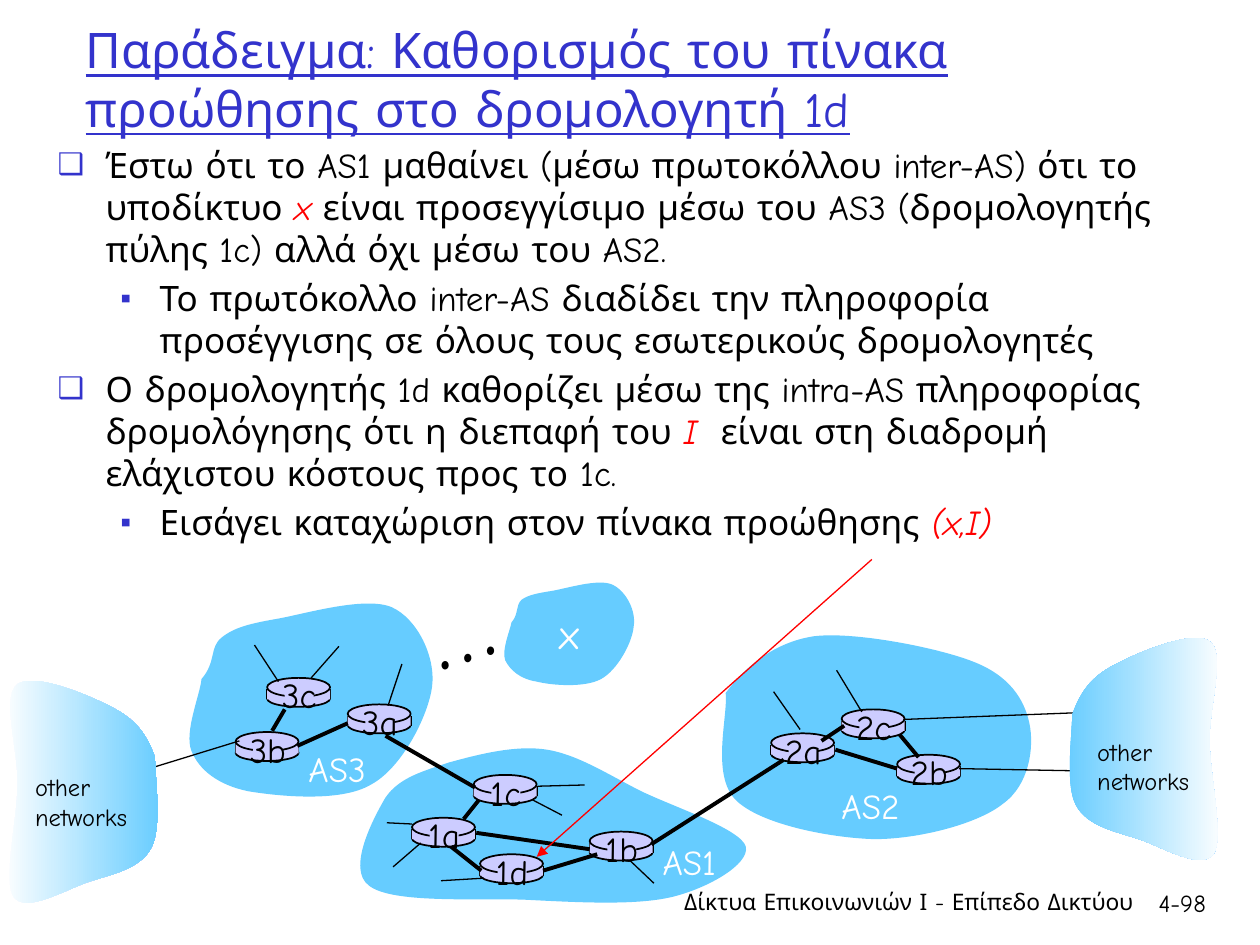
from dataclasses import dataclass
from lxml import etree
from pptx import Presentation
from pptx.dml.color import RGBColor
from pptx.enum.shapes import MSO_CONNECTOR, MSO_SHAPE
from pptx.enum.text import MSO_ANCHOR, MSO_AUTO_SIZE, PP_ALIGN
from pptx.oxml.ns import qn
from pptx.util import Inches, Pt

STRAIGHT = MSO_CONNECTOR.STRAIGHT
ELLIPSE, RECTANGLE = MSO_SHAPE.OVAL, MSO_SHAPE.RECTANGLE
LEFT, CENTER, RIGHT = PP_ALIGN.LEFT, PP_ALIGN.CENTER, PP_ALIGN.RIGHT
TOP, MIDDLE = MSO_ANCHOR.TOP, MSO_ANCHOR.MIDDLE
GROW = MSO_AUTO_SIZE.SHAPE_TO_FIT_TEXT
FIXED = MSO_AUTO_SIZE.NONE


@dataclass(frozen=True)
class Theme:
    font: str = "Comic Neue"
    black: str = "000000"
    white: str = "FFFFFF"
    accent: str = "3333CC"
    highlight: str = "FF0000"
    cloud: str = "66CCFF"
    router: str = "CCCCFF"
    title: int = 28
    body: int = 20
    network: int = 24
    dots: int = 54
    small: int = 14
    footer: int = 13
    thick: float = 2.25
    thin: float = 0.75
    outline: float = 1


THEME = Theme()

TITLE = "Παράδειγμα: Καθορισμός του πίνακα προώθησης στο δρομολογητή 1d"
BODY = [
    (0, ["Έστω ότι το AS1 μαθαίνει (μέσω πρωτοκόλλου inter-AS) ότι το υποδίκτυο ", "x ",
         "είναι προσεγγίσιμο μέσω του AS3 (δρομολογητής πύλης 1c) αλλά όχι μέσω του AS2."]),
    (1, ["Το πρωτόκολλο inter-AS διαδίδει την πληροφορία προσέγγισης σε όλους τους "
         "εσωτερικούς δρομολογητές"]),
    (0, ["Ο δρομολογητής 1d καθορίζει μέσω της intra-AS πληροφορίας δρομολόγησης ότι η "
         "διεπαφή του ", "I  ", "είναι στη διαδρομή ελάχιστου κόστους προς το 1c."]),
    (1, ["Εισάγει καταχώριση στον πίνακα προώθησης ", "(x,I)"]),
]
BULLETS = [("❑", 85, 0.38, -0.38), ("▪", 75, 0.81, -0.31)]

CLOUDS = {
    "AS2": [(5.76, 5.5), (5.9, 5.31), (6.13, 5.1), (6.46, 5.05), (6.78, 5.01), (7.44, 5.14),
            (7.72, 5.25), (8.01, 5.36), (8.13, 5.55), (8.17, 5.74), (8.21, 5.93), (8.17, 6.23),
            (7.96, 6.38), (7.76, 6.54), (7.29, 6.66), (6.94, 6.66), (6.58, 6.65), (6.03, 6.54),
            (5.84, 6.35), (5.64, 6.15), (5.78, 5.68), (5.76, 5.5)],
    "AS3": [(1.6, 5.39), (1.72, 5.25), (1.66, 5.14), (1.76, 5.06), (1.86, 4.98), (1.98, 4.95),
            (2.21, 4.91), (2.43, 4.87), (2.9, 4.73), (3.11, 4.82), (3.31, 4.91), (3.46, 5.21),
            (3.43, 5.45), (3.4, 5.68), (3.19, 6.1), (2.94, 6.23), (2.7, 6.37), (2.21, 6.32),
            (1.97, 6.28), (1.73, 6.23), (1.58, 6.11), (1.52, 5.96), (1.46, 5.81), (1.59, 5.51),
            (1.6, 5.39)],
    "AS1": [(3.06, 6.33), (3.17, 6.17), (3.36, 6.12), (3.57, 6.05), (3.79, 5.99), (4.09, 5.91),
            (4.34, 5.95), (4.59, 5.99), (4.83, 6.15), (5.09, 6.28), (5.36, 6.41), (5.88, 6.58),
            (5.92, 6.72), (5.95, 6.86), (5.62, 7.05), (5.33, 7.12), (5.03, 7.19), (4.55, 7.16),
            (4.15, 7.14), (3.75, 7.13), (3.11, 7.17), (2.93, 7.03), (2.75, 6.9), (2.96, 6.5),
            (3.06, 6.33)],
    "x": [(4.06, 4.94), (4.12, 4.87), (4.09, 4.81), (4.14, 4.76), (4.2, 4.72), (4.26, 4.71),
          (4.38, 4.69), (4.5, 4.67), (4.75, 4.59), (4.86, 4.64), (4.97, 4.69), (5.05, 4.85),
          (5.03, 4.97), (5.02, 5.1), (4.9, 5.32), (4.77, 5.39), (4.64, 5.46), (4.38, 5.44),
          (4.26, 5.41), (4.13, 5.39), (4.05, 5.32), (4.01, 5.24), (3.98, 5.16), (4.05, 5),
          (4.06, 4.94)],
}
OTHER_RIGHT = [(8.51, 5.67), (8.57, 5.51), (8.64, 5.39), (8.82, 5.29), (9, 5.19), (9.47, 4.99),
               (9.6, 5.09), (9.73, 5.18), (9.6, 5.59), (9.6, 5.87), (9.6, 6.16), (9.72, 6.65),
               (9.63, 6.78), (9.53, 6.91), (9.22, 6.72), (9.04, 6.66), (8.86, 6.6), (8.63, 6.56),
               (8.54, 6.39), (8.45, 6.23), (8.51, 5.82), (8.51, 5.67)]
OTHER_LEFT = [(9.74 - x, y + 0.34) for x, y in OTHER_RIGHT]

ROUTERS = {"3b": (1.87, 5.81), "1d": (3.81, 6.78), "3a": (2.76, 5.59), "1c": (3.76, 6.15),
           "2a": (6.12, 5.82), "1a": (3.27, 6.49), "2c": (6.68, 5.63), "2b": (7.12, 5.99),
           "1b": (4.68, 6.6), "3c": (2.12, 5.38)}
LINKS = [(6.63, 5.95, 7.12, 6.1), (7.14, 5.83, 7.29, 6.01), (6.52, 5.88, 6.7, 5.76),
         (4.31, 6.91, 4.74, 6.78), (3.58, 6.72, 3.82, 6.91), (3.78, 6.61, 4.68, 6.74),
         (3.68, 6.5, 3.8, 6.35), (2.36, 5.92, 2.76, 5.74), (3.06, 5.84, 3.77, 6.25),
         (5.17, 6.7, 6.22, 6.03), (2.26, 5.63, 2.16, 5.8)]
STUBS = [(1.12, 6.12, 1.9, 5.88), (2.69, 5.13, 2.47, 5.38), (2.02, 5.12, 2.21, 5.41),
         (3.19, 5.27, 3.08, 5.6), (7.61, 6.1, 8.65, 6.12), (7.17, 5.71, 8.72, 5.65),
         (6.84, 5.65, 6.64, 5.32), (6.35, 5.79, 6.14, 5.49), (3.34, 6.69, 3.12, 6.88),
         (3.27, 6.54, 3.07, 6.53), (3.84, 6.97, 3.5, 6.99), (4.27, 6.24, 4.64, 6.23),
         (5, 6.83, 5.19, 7.01), (4.23, 6.35, 4.46, 6.47)]
POINTER = (6.92, 4.44, 4.26, 6.8)

LABELS = [
    ("AS3", (2.35, 5.88, 0.77, 0.43), dict(color=THEME.white)),
    ("AS1", (5.16, 6.62, 0.72, 0.43), dict(color=THEME.white)),
    ("AS2", (6.58, 6.18, 0.77, 0.43), dict(color=THEME.white)),
    ("x", (4.34, 4.77, 0.4, 0.5), dict(color=THEME.white, size=THEME.network)),
    ("…", (3.29, 4.47, 0.71, 1), dict(size=THEME.dots, rotation=342.3)),
    ("other\nnetworks", (0.18, 6.08, 0.98, 0.57), dict(size=THEME.small)),
    ("other\nnetworks", (8.61, 5.8, 0.98, 0.57), dict(size=THEME.small)),
    ("Δίκτυα Επικοινωνιών Ι - Επίπεδο Δικτύου", (5.28, 7, 3.81, 0.5),
     dict(size=THEME.footer, align=RIGHT, wrap=True)),
    ("4-98", (8.93, 7, 0.74, 0.5), dict(size=THEME.small, align=RIGHT, wrap=True)),
]


def rgb(color):
    return RGBColor.from_string(color)


def place(shape, box):
    shape.left, shape.top, shape.width, shape.height = map(Inches, box)


def add_run(paragraph, text, size=THEME.body, color=THEME.black, **style):
    run = paragraph.add_run()
    run.text = text
    run.font.name, run.font.size = THEME.font, Pt(size)
    run.font.color.rgb = rgb(color)
    for name, value in style.items():
        setattr(run.font, name, value)


def write(shape, text, align=LEFT, anchor=TOP, wrap=False, rotation=0, **style):
    frame = shape.text_frame
    frame.word_wrap, frame.vertical_anchor = wrap, anchor
    frame.auto_size = FIXED if wrap else GROW
    shape.rotation = rotation
    for index, line in enumerate(text.split("\n")):
        paragraph = frame.add_paragraph() if index else frame.paragraphs[0]
        paragraph.alignment = align
        add_run(paragraph, line, **style)


def add_label(slide, text, box, **style):
    write(slide.shapes.add_textbox(*map(Inches, box)), text, **style)


def add_bullet(paragraph, level):
    character, percent, margin, indent = BULLETS[level]
    properties = paragraph._p.get_or_add_pPr()
    properties.set("marL", str(Inches(margin)))
    properties.set("indent", str(Inches(indent)))
    color = etree.SubElement(properties, qn("a:buClr"))
    etree.SubElement(color, qn("a:srgbClr"), val=THEME.accent)
    etree.SubElement(properties, qn("a:buSzPct"), val=str(percent * 1000))
    etree.SubElement(properties, qn("a:buFont"), typeface=THEME.font)
    etree.SubElement(properties, qn("a:buChar"), char=character)


def add_body(slide):
    frame = slide.shapes.add_textbox(*map(Inches, (0.36, 1.09, 9.3, 3.99))).text_frame
    frame.word_wrap = True
    for index, (level, parts) in enumerate(BODY):
        paragraph = frame.add_paragraph() if index else frame.paragraphs[0]
        paragraph.level, paragraph.space_before = level, Pt(4)
        add_bullet(paragraph, level)
        for position, part in enumerate(parts):
            marked = position % 2 == 1
            add_run(paragraph, part, italic=marked,
                    color=THEME.highlight if marked else THEME.black)


def bend(outline):
    corners = list(outline.iter(qn("a:lnTo")))
    for i in range(0, len(corners), 3):
        curve = etree.Element(qn("a:cubicBezTo"))
        corners[i].addprevious(curve)
        for corner in corners[i:i + 3]:
            curve.append(corner[0])
            corner.getparent().remove(corner)


def add_cloud(slide, nodes, gradient=None):
    start, *rest = [(Inches(x), Inches(y)) for x, y in nodes]
    builder = slide.shapes.build_freeform(*start)
    builder.add_line_segments(rest, close=True)
    cloud = builder.convert_to_shape()
    bend(cloud._element)
    cloud.shadow.inherit = False
    cloud.line.fill.background()
    if gradient:
        cloud.fill.gradient()
        cloud.fill.gradient_angle = 0
        for stop, color in zip(cloud.fill.gradient_stops, gradient):
            stop.color.rgb = rgb(color)
    else:
        cloud.fill.solid()
        cloud.fill.fore_color.rgb = rgb(THEME.cloud)


def add_line(slide, ends, width, color=THEME.black, arrow=False):
    line = slide.shapes.add_connector(STRAIGHT, *map(Inches, ends))
    line.line.width, line.line.color.rgb = Pt(width), rgb(color)
    if arrow:
        etree.SubElement(line.line._get_or_add_ln(), qn("a:tailEnd"), type="triangle")
    etree.SubElement(line._element.spPr, qn("a:effectLst"))


def add_part(slide, kind, box, outlined):
    part = slide.shapes.add_shape(kind, *map(Inches, box))
    part.shadow.inherit = False
    part.fill.solid()
    part.fill.fore_color.rgb = rgb(THEME.router)
    if outlined:
        part.line.color.rgb, part.line.width = rgb(THEME.black), Pt(THEME.outline)
    else:
        part.line.fill.background()


def add_router(slide, name, x, y):
    add_part(slide, ELLIPSE, (x, y + 0.1, 0.5, 0.13), True)
    for side in (x, x + 0.5):
        add_line(slide, (side, y + 0.09, side, y + 0.17), THEME.outline)
    add_part(slide, RECTANGLE, (x, y + 0.09, 0.5, 0.08), False)
    add_part(slide, ELLIPSE, (x, y, 0.5, 0.15), True)
    add_part(slide, RECTANGLE, (x + 0.14, y + 0.02, 0.23, 0.19), False)
    add_label(slide, name, (x, y - 0.08, 0.51, 0.43), align=CENTER)


def main():
    presentation = Presentation()
    presentation.slide_width, presentation.slide_height = Inches(10), Inches(7.5)
    slide = presentation.slides.add_slide(presentation.slide_layouts[5])
    title = slide.shapes.title
    place(title, (0.58, 0, 9.19, 1.25))
    write(title, TITLE, anchor=MIDDLE, wrap=True, size=THEME.title, color=THEME.accent,
          underline=True)
    add_body(slide)
    for nodes in CLOUDS.values():
        add_cloud(slide, nodes)
    for name, (x, y) in ROUTERS.items():
        add_router(slide, name, x, y)
    for lines, width in ((LINKS, THEME.thick), (STUBS, THEME.thin)):
        for ends in lines:
            add_line(slide, ends, width)
    add_line(slide, POINTER, THEME.thin, THEME.highlight, arrow=True)
    add_cloud(slide, OTHER_RIGHT, (THEME.cloud, THEME.white))
    add_cloud(slide, OTHER_LEFT, (THEME.white, THEME.cloud))
    for text, box, style in LABELS:
        add_label(slide, text, box, **style)
    presentation.save("out.pptx")


if __name__ == "__main__":
    main()
